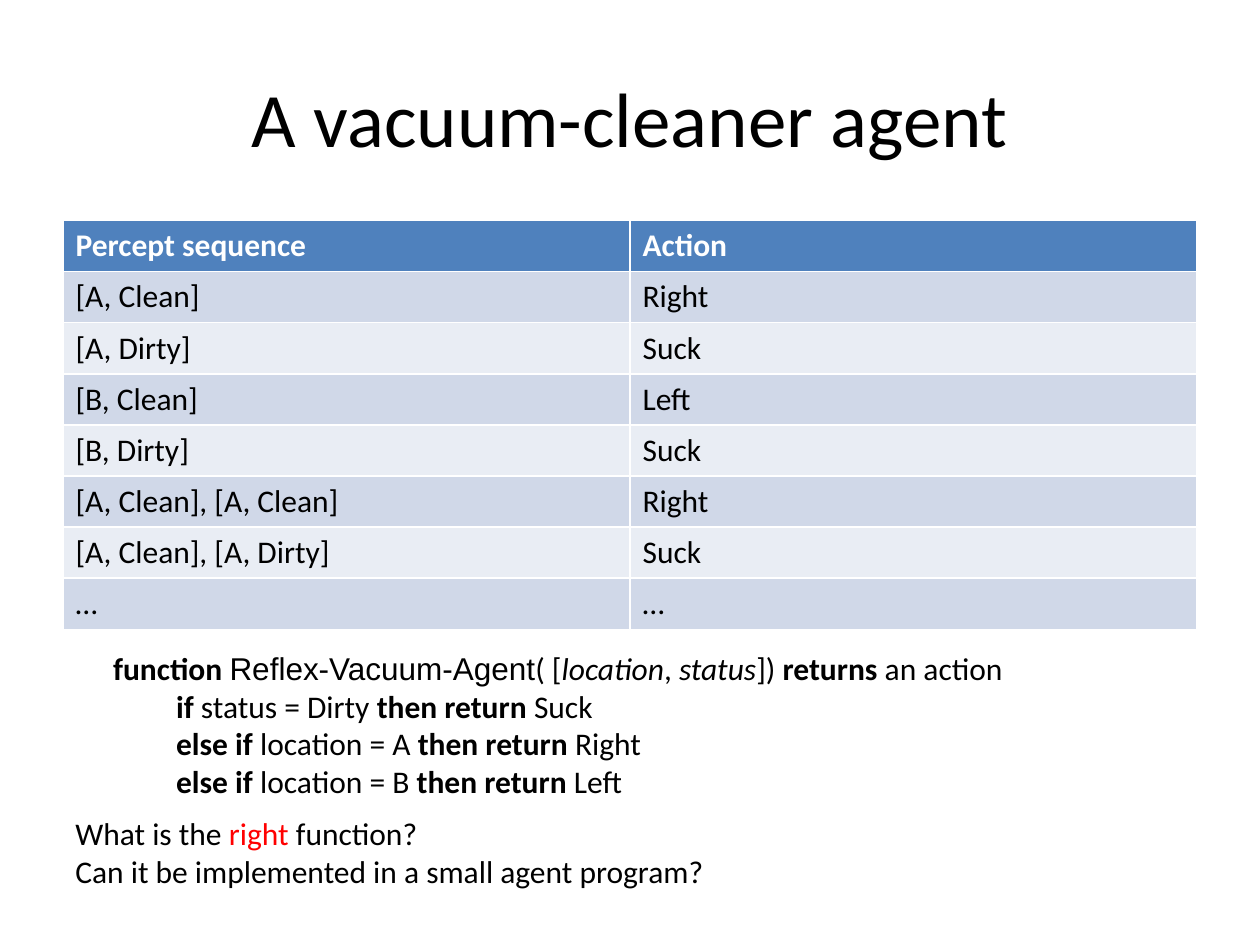
from pptx import Presentation
from pptx.dml.color import RGBColor
from pptx.enum.text import MSO_ANCHOR, PP_ALIGN
from pptx.util import Inches, Pt

CENTER = PP_ALIGN.CENTER
MIDDLE = MSO_ANCHOR.MIDDLE

ROWS = [
    ("Percept sequence", "Action"),
    ("[A, Clean]", "Right"),
    ("[A, Dirty]", "Suck"),
    ("[B, Clean]", "Left"),
    ("[B, Dirty]", "Suck"),
    ("[A, Clean], [A, Clean]", "Right"),
    ("[A, Clean], [A, Dirty]", "Suck"),
    ("…", "…"),
]
BOLD = {"bold": True}
SLANT = {"italic": True}
HEAD = [
    ("function ", BOLD),
    ("Reflex-Vacuum-Agent", {"font": "Arial"}),
    ("( [", {}),
    ("location", SLANT),
    (", ", {}),
    ("status", SLANT),
    ("]) ", {}),
    ("returns", BOLD),
    (" an action", {}),
]
RULES = [
    ("if ", "status = Dirty ", "Suck"),
    ("else if ", "location = A ", "Right"),
    ("else if ", "location = B ", "Left"),
]
ASKS = [
    [("What is the ", {}), ("right", {"color": "FF0000"}), (" function?", {})],
    [("Can it be implemented in a small agent program?", {})],
]


def paint(target, color):
    target.rgb = RGBColor.from_string(color)


def write(para, text, size=18, font="Calibri", color="000000", bold=False, italic=False):
    run = para.add_run()
    run.text = text
    run.font.size = Pt(size)
    run.font.name = font
    run.font.bold = bold
    run.font.italic = italic
    paint(run.font.color, color)


def add_title(slide, box, text):
    title = slide.shapes.title
    title.left, title.top, title.width, title.height = map(Inches, box)
    title.text_frame.vertical_anchor = MIDDLE
    para = title.text_frame.paragraphs[0]
    para.alignment = CENTER
    write(para, text, size=44)


def add_grid(slide, box, rows):
    table = slide.shapes.add_table(len(rows), len(rows[0]), *map(Inches, box)).table
    for r, row in enumerate(rows):
        head = r == 0
        fill = "4F81BD" if head else ("E9EDF4", "D0D8E8")[r % 2]
        for c, text in enumerate(row):
            cell = table.cell(r, c)
            cell.fill.solid()
            paint(cell.fill.fore_color, fill)
            color = "FFFFFF" if head else "000000"
            write(cell.text_frame.paragraphs[0], text, color=color, bold=head)


def add_lines(slide, box, lines, indent=0):
    frame = slide.shapes.add_textbox(*map(Inches, box)).text_frame
    frame.word_wrap = True
    for n, line in enumerate(lines):
        para = frame.add_paragraph() if n else frame.paragraphs[0]
        if n and indent:
            para._p.get_or_add_pPr().set("marL", str(Inches(indent)))
        for text, style in line:
            write(para, text, **style)


def add_code(slide, box):
    body = [
        [(word, BOLD), (test, {}), ("then return ", BOLD), (act, {})]
        for word, test, act in RULES
    ]
    add_lines(slide, box, [HEAD] + body, indent=0.5)


def main():
    deck = Presentation()
    deck.slide_width, deck.slide_height = Inches(10), Inches(7.5)
    slide = deck.slides.add_slide(deck.slide_layouts[5])
    add_title(slide, (0.5, 0.3, 9, 1.25), "A vacuum-cleaner agent")
    add_grid(slide, (0.5, 1.75, 9, 3.24), ROWS)
    add_code(slide, (0.8, 5.1, 8.33, 1.31))
    add_lines(slide, (0.5, 6.41, 7.33, 0.71), ASKS)
    deck.save("out.pptx")


if __name__ == "__main__":
    main()
